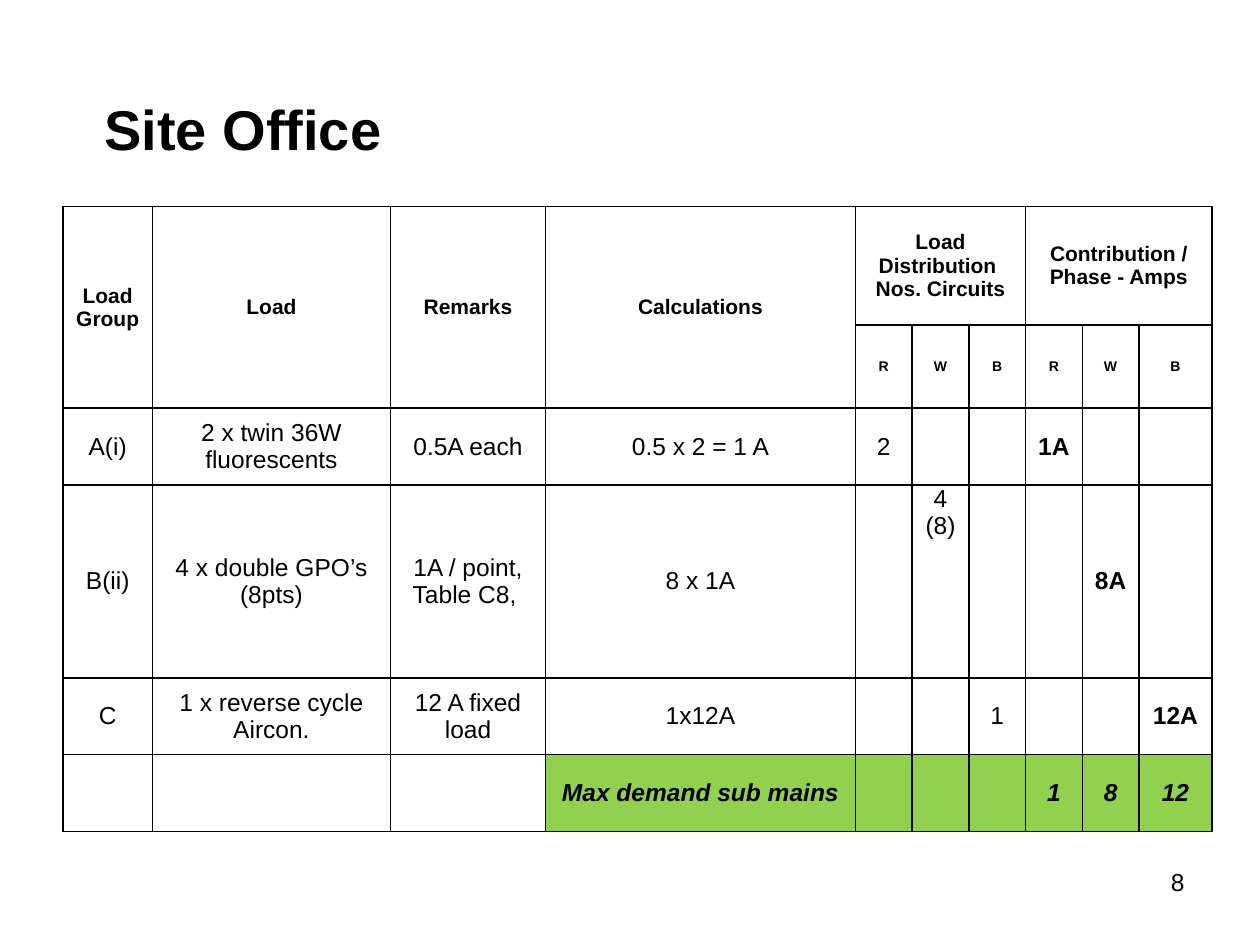
from lxml.etree import SubElement
from pptx import Presentation
from pptx.dml.color import RGBColor
from pptx.enum.text import MSO_ANCHOR, PP_ALIGN
from pptx.oxml.ns import qn
from pptx.util import Inches, Pt

BLACK = RGBColor(0, 0, 0)
GREEN = RGBColor(0x92, 0xD0, 0x50)
FONT = "Arial"

COLS = [0.71, 1.89, 1.23, 2.46] + [0.45] * 5 + [0.58]
ROWS = [0.94, 0.66, 0.61, 1.53, 0.61, 0.61]
CELLS = [
    ["Load Group", "Load", "Remarks", "Calculations",
     "Load Distribution \nNos. Circuits", "", "",
     "Contribution / Phase - Amps", "", ""],
    [""] * 4 + ["R", "W", "B"] * 2,
    ["A(i)", "2 x twin 36W fluorescents", "0.5A each", "0.5 x 2 = 1 A",
     "2", "", "", "1A", "", ""],
    ["B(ii)", "4 x double GPO’s (8pts)", "1A / point, Table C8, ", "8 x 1A",
     "", "4 (8)", "", "", "8A", ""],
    ["C", "1 x reverse cycle Aircon.", "12 A fixed load", "1x12A",
     "", "", "1", "", "", "12A"],
    ["", "", "", "Max demand sub mains", "", "", "", "1", "8", "12"],
]
HEAD, SUB, TOTAL = 0, 1, 5
CALC, AMPS = 3, 7  # first columns of the total and of the phase currents


def style(frame, size, align, bold=False, italic=False):
    for para in frame.paragraphs:
        para.alignment = align
        for run in para.runs:
            font = run.font
            font.name, font.size = FONT, Pt(size)
            font.bold, font.italic = bold, italic
            font.color.rgb = BLACK


def add_text(slide, box, text, size, align, anchor, bold=False):
    frame = slide.shapes.add_textbox(*map(Inches, box)).text_frame
    frame.word_wrap = True
    frame.vertical_anchor = anchor
    frame.text = text
    style(frame, size, align, bold)


def add_border(cell):
    props = cell._tc.get_or_add_tcPr()
    for side in ("lnL", "lnR", "lnT", "lnB"):
        line = SubElement(props, qn(f"a:{side}"), w=str(Pt(1)))
        fill = SubElement(line, qn("a:solidFill"))
        SubElement(fill, qn("a:srgbClr"), val=str(BLACK))


def fill_cell(cell, row, col):
    add_border(cell)
    if row == TOTAL and col >= CALC:
        cell.fill.solid()
        cell.fill.fore_color.rgb = GREEN
    else:
        cell.fill.background()
    cell.margin_left = cell.margin_right = Inches(0.06)
    cell.margin_top = cell.margin_bottom = 0
    text = CELLS[row][col]
    cell.vertical_anchor = MSO_ANCHOR.TOP if text == "4 (8)" else MSO_ANCHOR.MIDDLE
    cell.text_frame.text = text
    size = {HEAD: 12, SUB: 8}.get(row, 14)
    bold = row in (HEAD, SUB, TOTAL) or col >= AMPS
    style(cell.text_frame, size, PP_ALIGN.CENTER, bold, row == TOTAL)


def add_loads(slide, box):
    table = slide.shapes.add_table(len(ROWS), len(COLS), *map(Inches, box)).table
    table.first_row = table.horz_banding = False
    for col, width in zip(table.columns, COLS):
        col.width = Inches(width)
    for row, height in zip(table.rows, ROWS):
        row.height = Inches(height)
    for row in range(len(ROWS)):
        for col in range(len(COLS)):
            fill_cell(table.cell(row, col), row, col)
    for col in range(4):
        table.cell(HEAD, col).merge(table.cell(SUB, col))
    for col in (4, AMPS):
        table.cell(HEAD, col).merge(table.cell(HEAD, col + 2))


def main():
    deck = Presentation()
    deck.slide_width, deck.slide_height = Inches(10), Inches(7.5)
    slide = deck.slides.add_slide(deck.slide_layouts[6])
    add_text(slide, (7.17, 6.83, 2.33, 0.52), "8", 14,
             PP_ALIGN.RIGHT, MSO_ANCHOR.TOP)
    add_text(slide, (0.73, 0.39, 8.77, 1.25), "Site Office", 32,
             PP_ALIGN.LEFT, MSO_ANCHOR.MIDDLE, bold=True)
    add_loads(slide, (0.5, 1.64, sum(COLS), sum(ROWS)))
    deck.save("out.pptx")


if __name__ == "__main__":
    main()
